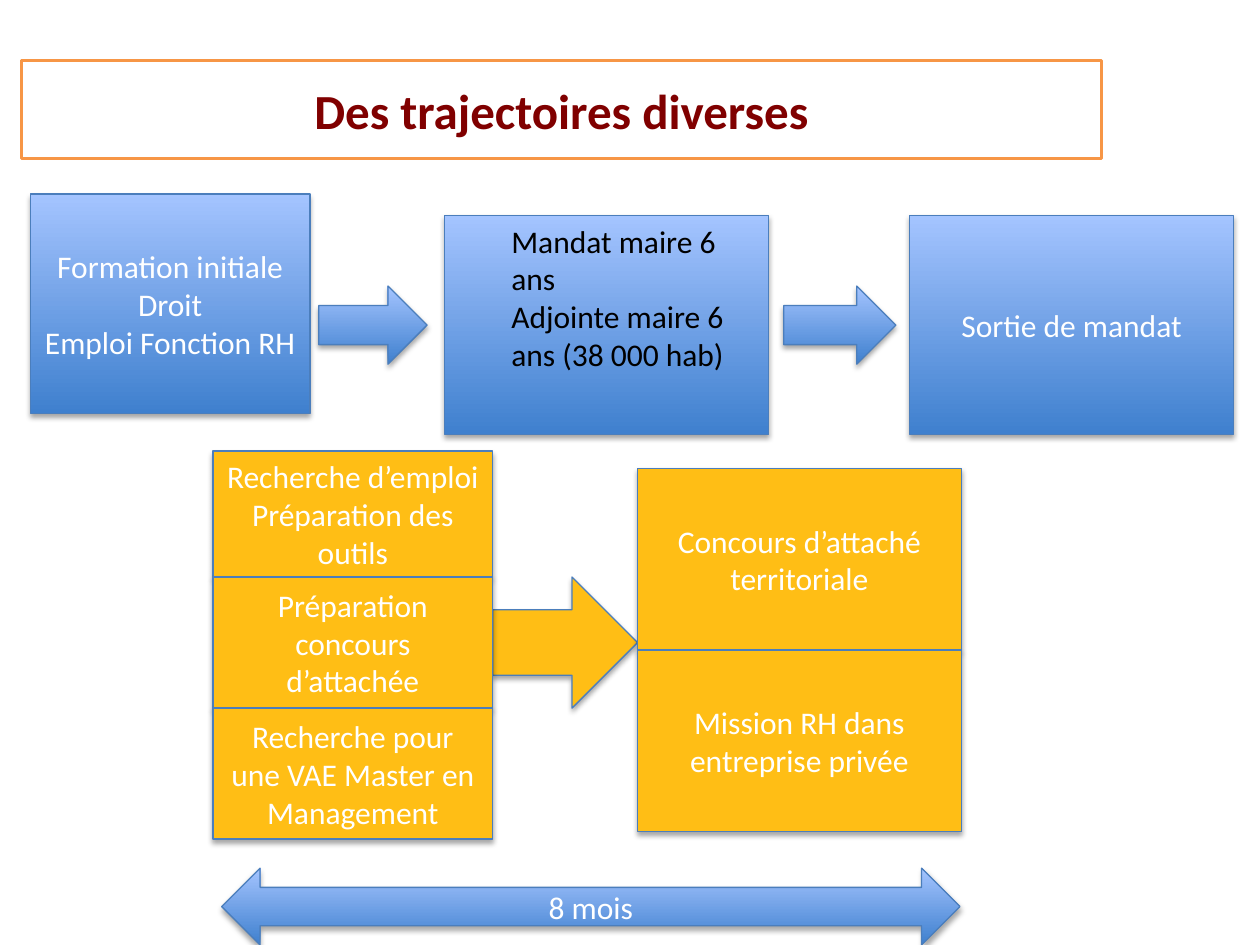
from lxml import etree
from pptx import Presentation
from pptx.dml.color import RGBColor
from pptx.enum.shapes import MSO_SHAPE
from pptx.enum.text import MSO_ANCHOR, MSO_AUTO_SIZE, PP_ALIGN
from pptx.oxml.ns import qn
from pptx.util import Inches, Pt

BLUE = ("3F80CE", "A4C4FF")
GOLD = "FFBE15"


def color(hex_value):
    return RGBColor.from_string(hex_value)


class TrajectorySlide:
    font_name = "Calibri"
    outline = "4B7EBC"

    def __init__(self, presentation):
        self.slide = presentation.slides.add_slide(presentation.slide_layouts[5])

    def set_text(self, frame, lines, size=18, ink="FFFFFF", bold=False,
                 align=PP_ALIGN.CENTER, anchor=MSO_ANCHOR.MIDDLE):
        frame.word_wrap = True
        frame.vertical_anchor = anchor
        frame.text = "\n".join(lines)
        for paragraph in frame.paragraphs:
            paragraph.alignment = align
            paragraph.font.name = self.font_name
            paragraph.font.size = Pt(size)
            paragraph.font.bold = bold
            paragraph.font.color.rgb = color(ink)

    def title(self, text, left, top, width, height):
        heading = self.slide.shapes.title
        heading.left, heading.top = Inches(left), Inches(top)
        heading.width, heading.height = Inches(width), Inches(height)
        heading.line.color.rgb = color("F79646")
        heading.line.width = Pt(1.5)
        self.set_text(heading.text_frame, [text], 28, "800000", True)

    def add_shadow(self, shape):
        shape.shadow.inherit = False
        effects = shape._element.spPr.find(qn("a:effectLst"))
        outer = etree.SubElement(effects, qn("a:outerShdw"), blurRad=str(Pt(3.1)),
                                 dist=str(Pt(1.8)), dir="5400000", rotWithShape="0")
        black = etree.SubElement(outer, qn("a:srgbClr"), val="000000")
        etree.SubElement(black, qn("a:alpha"), val="35000")

    def block(self, preset, left, top, width, height, fill, *lines):
        """Add a shadowed shape; fill is one colour or a (bottom, top) pair."""
        shape = self.slide.shapes.add_shape(
            preset, Inches(left), Inches(top), Inches(width), Inches(height))
        if isinstance(fill, tuple):
            shape.fill.gradient()
            shape.fill.gradient_angle = 90
            for stop, shade in zip(shape.fill.gradient_stops, fill):
                stop.color.rgb = color(shade)
        else:
            shape.fill.solid()
            shape.fill.fore_color.rgb = color(fill)
        shape.line.color.rgb = color(self.outline)
        shape.line.width = Pt(0.75)
        self.add_shadow(shape)
        if lines:
            self.set_text(shape.text_frame, lines)

    def box(self, *args):
        self.block(MSO_SHAPE.RECTANGLE, *args)

    def arrow(self, *args):
        self.block(MSO_SHAPE.RIGHT_ARROW, *args)

    def label(self, left, top, width, height, *lines):
        text_box = self.slide.shapes.add_textbox(
            Inches(left), Inches(top), Inches(width), Inches(height))
        self.set_text(text_box.text_frame, lines, ink="000000",
                      align=PP_ALIGN.LEFT, anchor=MSO_ANCHOR.TOP)
        text_box.text_frame.auto_size = MSO_AUTO_SIZE.SHAPE_TO_FIT_TEXT


def main():
    presentation = Presentation()
    presentation.slide_width, presentation.slide_height = Inches(10), Inches(7.5)
    page = TrajectorySlide(presentation)
    page.title("Des trajectoires diverses", 0.17, 0.48, 8.57, 0.78)

    narrow, wide = 2.22, 2.57

    # Career before and during the mandate
    page.box(0.24, 1.54, narrow, 1.74, BLUE,
             "Formation initiale Droit", "Emploi Fonction RH")
    page.arrow(2.53, 2.27, 0.86, 0.62, BLUE)
    page.box(3.53, 1.71, wide, 1.74, BLUE)
    page.arrow(6.22, 2.27, 0.89, 0.62, BLUE)
    page.box(7.22, 1.71, wide, 1.74, BLUE, "Sortie de mandat")
    page.label(3.96, 1.71, 2.15, 1.31,
               "Mandat maire 6 ans", "Adjointe maire 6 ans (38 000 hab)")

    # Steps after the mandate, then their outcomes
    steps_left, step_height = 1.69, 1.04
    outcomes_left, outcome_height = 5.06, 1.44
    steps_right = steps_left + narrow
    page.box(steps_left, 3.58, narrow, 1, GOLD,
             "Recherche d’emploi", "Préparation des outils")
    page.arrow(steps_right, 4.58, outcomes_left - steps_right, step_height, GOLD)
    for row, step in enumerate(["Préparation concours d’attachée",
                                "Recherche pour une VAE Master en Management"]):
        page.box(steps_left, 4.58 + row * step_height, narrow, step_height, GOLD, step)
    for row, outcome in enumerate(["Concours d’attaché territoriale",
                                   "Mission RH dans entreprise privée"]):
        page.box(outcomes_left, 3.72 + row * outcome_height, wide, outcome_height,
                 GOLD, outcome)

    page.block(MSO_SHAPE.LEFT_RIGHT_ARROW, 1.76, 6.89, 5.86, 0.61, BLUE, "8 mois")
    presentation.save("out.pptx")


if __name__ == "__main__":
    main()
